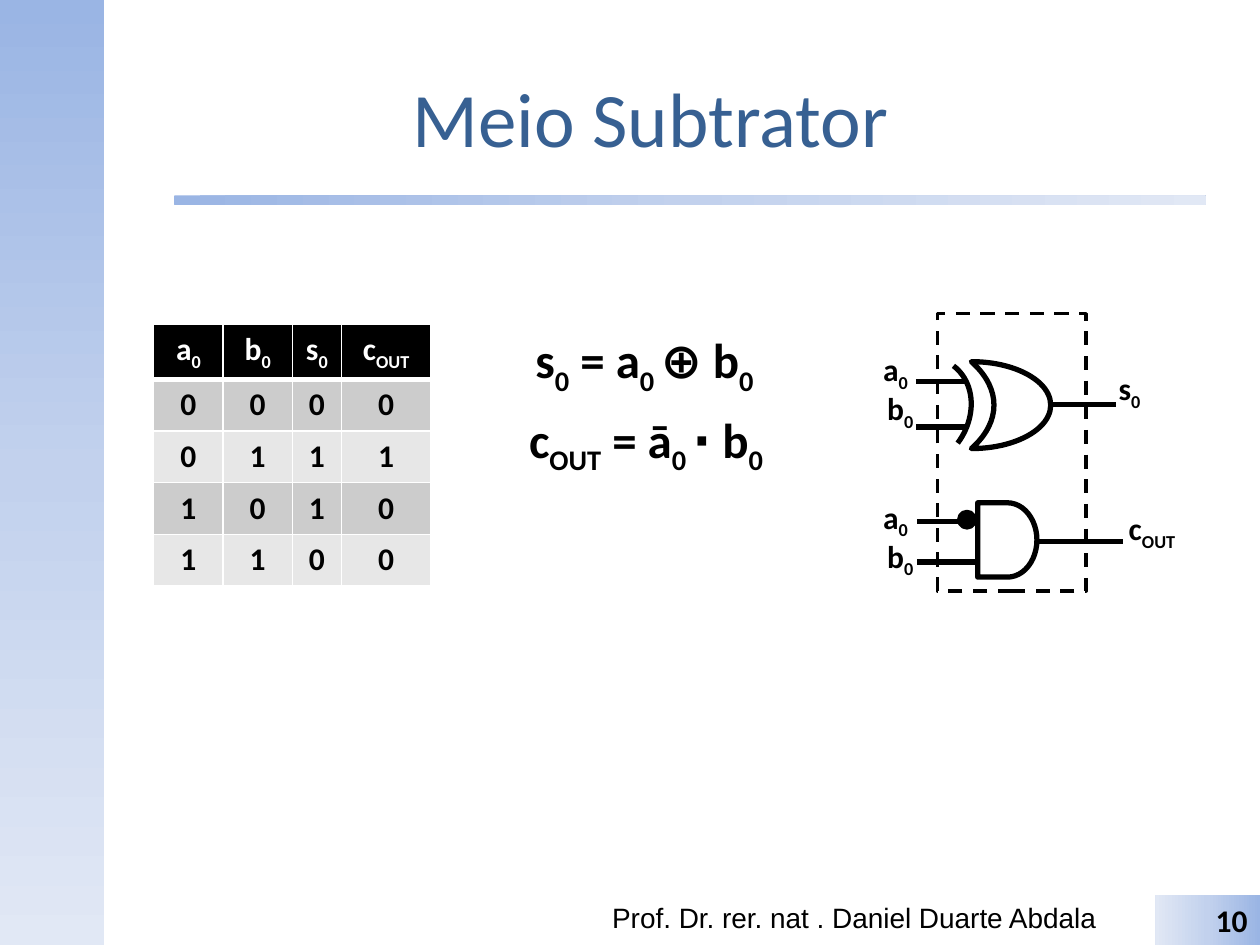
from copy import deepcopy
from lxml.etree import SubElement
from pptx import Presentation
from pptx.dml.color import RGBColor
from pptx.enum.dml import MSO_LINE
from pptx.enum.shapes import MSO_CONNECTOR, MSO_SHAPE as SHAPE
from pptx.enum.text import MSO_ANCHOR, MSO_AUTO_SIZE, PP_ALIGN as ALIGN
from pptx.oxml.ns import qn
from pptx.util import Inches, Pt

BLACK = RGBColor(0x00, 0x00, 0x00)
WHITE = RGBColor(0xFF, 0xFF, 0xFF)
TITLE_BLUE = RGBColor(0x37, 0x60, 0x92)
GRADIENT = [(0, RGBColor(0x9A, 0xB5, 0xE4)), (0.5, RGBColor(0xC2, 0xD1, 0xED)),
            (1, RGBColor(0xE1, 0xE8, 0xF5))]
ROW_GRAYS = [RGBColor(0xE7, 0xE7, 0xE7), RGBColor(0xCC, 0xCC, 0xCC)]

prs = Presentation()
prs.slide_width, prs.slide_height = Inches(10), Inches(7.5)
slide = prs.slides.add_slide(prs.slide_layouts[5])
shapes = slide.shapes


def add_gradient_bar(kind, box, angle):
    bar = shapes.add_shape(kind, *map(Inches, box))
    bar.shadow.inherit = False
    bar.line.fill.background()
    bar.fill.gradient()
    bar.fill.gradient_angle = angle
    stop_list = bar._element.spPr.find(qn("a:gradFill")).find(qn("a:gsLst"))
    stop_list.insert(1, deepcopy(stop_list[0]))
    for stop, (position, color) in zip(bar.fill.gradient_stops, GRADIENT):
        stop.position = position
        stop.color.rgb = color
    return bar


def write_formula(paragraph, pieces, size, color=BLACK):
    for i, piece in enumerate(pieces):
        run = paragraph.add_run()
        run.text = piece
        run.font.name, run.font.size = "Calibri", Pt(size)
        run.font.bold = True
        run.font.color.rgb = color
        if i % 2:
            run.font._element.set("baseline", "-25000")


add_gradient_bar(SHAPE.RECTANGLE, (0, 0, 0.83, 7.5), 270)
add_gradient_bar(SHAPE.ROUNDED_RECTANGLE, (1.38, 1.55, 8.19, 0.08), 0)

title = shapes.title
title.left, title.top = Inches(0.83), Inches(0.3)
title.width, title.height = Inches(8.67), Inches(1.25)
title.text_frame.text = "Meio Subtrator"
title.text_frame.vertical_anchor = MSO_ANCHOR.MIDDLE
title_line = title.text_frame.paragraphs[0]
title_line.alignment = ALIGN.CENTER
title_line.font.name, title_line.font.size = "Calibri", Pt(44)
title_line.font.color.rgb = TITLE_BLUE

author = shapes.add_textbox(Inches(4.76), Inches(7.1), Inches(4.19), Inches(0.4))
author.text_frame.word_wrap = True
author.text_frame.text = "Prof. Dr. rer. nat . Daniel Duarte Abdala"
author_font = author.text_frame.paragraphs[0].runs[0].font
author_font.name, author_font.size = "Arial", Pt(16)
author_font.color.rgb = BLACK

page_badge = add_gradient_bar(SHAPE.RECTANGLE, (9.17, 7.1, 0.83, 0.4), 180)
page_line = page_badge.text_frame.paragraphs[0]
page_line.alignment = ALIGN.RIGHT
write_formula(page_line, ["10"], 18)

truth_rows = [[("a", "0"), ("b", "0"), ("s", "0"), ("c", "OUT")],
              "0000", "0111", "1010", "1100"]
truth_table = shapes.add_table(5, 4, Inches(1.22), Inches(2.57), Inches(2.2), Inches(2.05)).table
for column, width in zip(truth_table.columns, (0.55, 0.55, 0.39, 0.71)):
    column.width = Inches(width)
for r, values in enumerate(truth_rows):
    truth_table.rows[r].height = Inches(0.41)
    for c, value in enumerate(values):
        cell = truth_table.cell(r, c)
        paragraph = cell.text_frame.paragraphs[0]
        paragraph.alignment = ALIGN.CENTER
        write_formula(paragraph, value, 18, BLACK if r else WHITE)
        properties = cell._tc.get_or_add_tcPr()
        for side in ("lnL", "lnR", "lnT", "lnB"):
            thick = (r == 0 and side == "lnB") or (r == 1 and side == "lnT")
            border = SubElement(properties, qn("a:" + side), w=str(Pt(3 if thick else 1)))
            SubElement(SubElement(border, qn("a:solidFill")), qn("a:srgbClr"), val=str(WHITE))
        cell.fill.solid()
        cell.fill.fore_color.rgb = ROW_GRAYS[r % 2] if r else BLACK

formulas = [
    ((4.08, 2.57, 2.07, 0.57), ["s", "0", " = a", "0 ", "⊕ b", "0"], 28, ALIGN.CENTER, False),
    ((4.1, 3.2, 2.32, 0.57), ["c", "OUT", " = ā", "0 ", "⋅ b", "0"], 28, ALIGN.LEFT, True),
    ((8.78, 2.88, 0.45, 0.4), ["s", "0"], 18, ALIGN.LEFT, False),
    ((8.86, 3.99, 0.62, 0.4), ["c", "OUT"], 18, ALIGN.LEFT, False),
]
for gate_top in (2.73, 3.9):
    formulas += [((6.91, gate_top, 0.45, 0.4), ["a", "0"], 18, ALIGN.LEFT, False),
                 ((6.93, gate_top + 0.31, 0.43, 0.4), ["b", "0"], 18, ALIGN.CENTER, False)]
for box, pieces, size, alignment, wrap in formulas:
    formula = shapes.add_textbox(*map(Inches, box))
    formula.text_frame.word_wrap = wrap
    formula.text_frame.auto_size = MSO_AUTO_SIZE.SHAPE_TO_FIT_TEXT
    paragraph = formula.text_frame.paragraphs[0]
    paragraph.alignment = alignment
    write_formula(paragraph, pieces, size)

wires = [(7.28, 7.76, 4.14), (7.28, 7.77, 4.46), (8.23, 8.91, 4.3),
         (7.27, 7.66, 3.03), (7.27, 7.67, 3.39), (8.34, 8.86, 3.21)]
for start, end, y in wires:
    wire = shapes.add_connector(MSO_CONNECTOR.STRAIGHT, Inches(start), Inches(y),
                                Inches(end), Inches(y))
    wire.line.color.rgb = BLACK
    wire.line.width = Pt(3)
    SubElement(wire._element.spPr, qn("a:effectLst"))

gate_parts = []
for kind, box, weight in [
    (SHAPE.FLOWCHART_DELAY, (7.76, 3.99, 0.47, 0.59), 3),
    (SHAPE.ARC, (6.89, 2.81, 0.79, 0.94), 3),
    (SHAPE.MOON, (7.71, 2.87, 0.63, 0.69), 3),
    (SHAPE.RECTANGLE, (7.44, 2.49, 1.18, 2.2), 2),
    (SHAPE.OVAL, (7.61, 4.06, 0.13, 0.13), 2),
]:
    part = shapes.add_shape(kind, *map(Inches, box))
    part.shadow.inherit = False
    part.fill.background()
    part.line.color.rgb = BLACK
    part.line.width = Pt(weight)
    gate_parts.append(part)

and_gate, xor_arc, xor_gate, circuit_frame, inverter = gate_parts
xor_arc.rotation = 36.9
xor_gate.adjustments[0] = 0.715
xor_gate._element.spPr.xfrm.set("flipH", "1")
circuit_frame.line.dash_style = MSO_LINE.DASH
inverter.fill.solid()
inverter.fill.fore_color.rgb = BLACK

prs.save("out.pptx")
